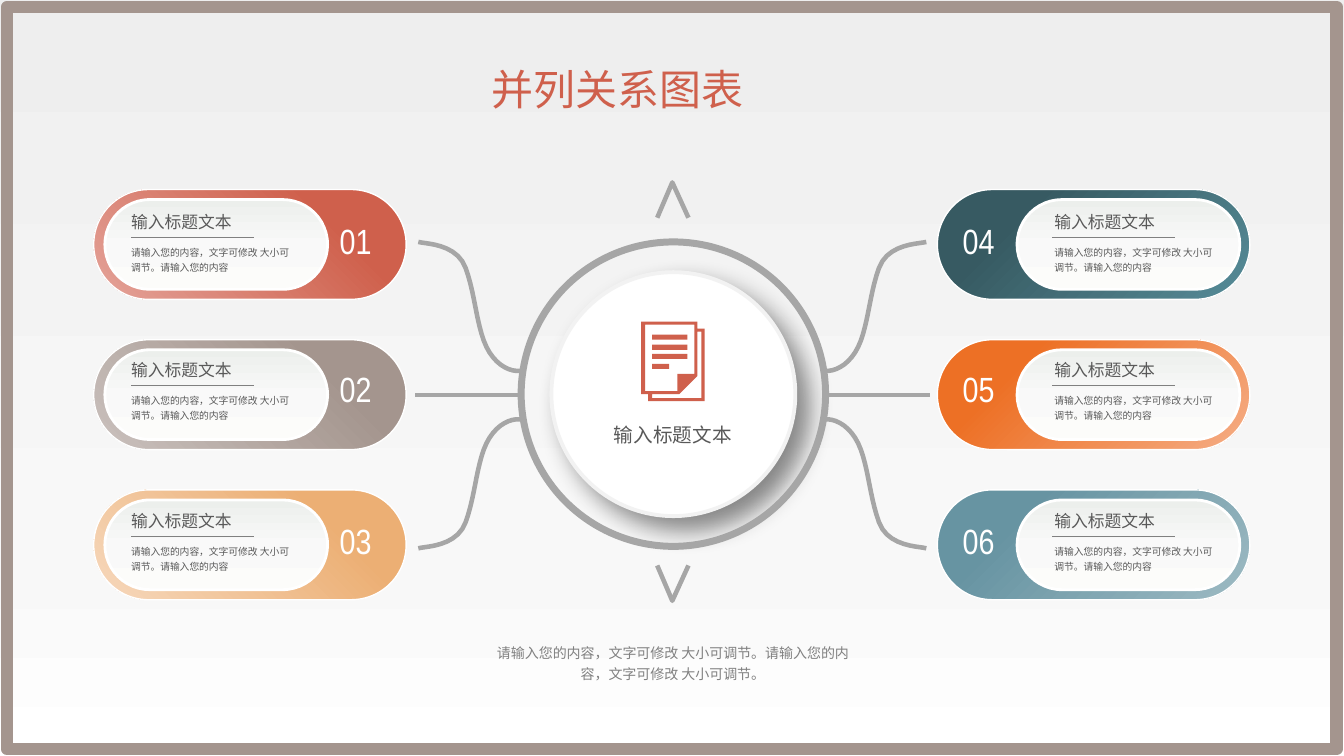
import math

import lxml.etree
import pptx
import pptx.dml.color
import pptx.enum.lang
import pptx.enum.shapes
import pptx.enum.text
import pptx.oxml.ns
import pptx.util

RGBColor = pptx.dml.color.RGBColor
WHITE, BLACK = RGBColor(0xFF, 0xFF, 0xFF), RGBColor(0, 0, 0)
PALE, SILVER = RGBColor(0xF2, 0xF2, 0xF2), RGBColor(0xA6, 0xA6, 0xA6)
MIST, CLOUD = RGBColor(0xEE, 0xEE, 0xEE), RGBColor(0xF8, 0xF8, 0xF8)
GRAY, DARK = RGBColor(0x80, 0x80, 0x80), RGBColor(0x59, 0x59, 0x59)
RED, RED_LIGHT = RGBColor(0xCF, 0x60, 0x4C), RGBColor(0xE4, 0xA3, 0x99)
TAUPE, TAUPE_LIGHT = RGBColor(0xA4, 0x95, 0x8E), RGBColor(0xCA, 0xC1, 0xBD)
SAND, SAND_LIGHT = RGBColor(0xEC, 0xAF, 0x74), RGBColor(0xF6, 0xD8, 0xBC)
PINE, PINE_LIGHT = RGBColor(0x37, 0x5A, 0x62), RGBColor(0x56, 0x8C, 0x98)
ORANGE, ORANGE_LIGHT = RGBColor(0xED, 0x70, 0x25), RGBColor(0xF5, 0xAD, 0x85)
TEAL, TEAL_LIGHT = RGBColor(0x67, 0x94, 0xA2), RGBColor(0x9D, 0xBA, 0xC3)
PANEL_STOPS = [(0, RGBColor(0xEC, 0xEF, 0xEC)), (51, RGBColor(0xF9, 0xF9, 0xF9)),
               (100, RGBColor(0xFC, 0xFC, 0xFA))]
HEADING = "输入标题文本"
BODY = "请输入您的内容，文字可修改 大小可调节。请输入您的内容"
PX = 9144
MIRROR_X, MIRROR_Y = 1334, 784
ALIGN = pptx.enum.text.PP_ALIGN
SHAPE = pptx.enum.shapes.MSO_SHAPE
qn = pptx.oxml.ns.qn


def write(box, text, size, color, font="Noto Sans CJK SC", align=ALIGN.LEFT, spacing=1.0, before=0):
    """Fill a box with one formatted paragraph."""
    frame = box.text_frame
    frame.word_wrap = True
    frame.auto_size = pptx.enum.text.MSO_AUTO_SIZE.SHAPE_TO_FIT_TEXT
    frame.vertical_anchor = pptx.enum.text.MSO_ANCHOR.TOP
    frame.margin_left = frame.margin_top = frame.margin_right = frame.margin_bottom = 0
    para = frame.paragraphs[0]
    para.alignment = align
    para.line_spacing = spacing
    para.space_before = pptx.util.Pt(before)
    span = para.add_run()
    span.text = text
    span.font.size = pptx.util.Pt(size)
    span.font.color.rgb = color
    span.font.name = font
    span.font.language_id = pptx.enum.lang.MSO_LANGUAGE_ID.SIMPLIFIED_CHINESE
    lxml.etree.SubElement(span.font._element, qn("a:ea"), typeface=font)


class Painter:
    """Draw styled elements on the current page."""

    def __init__(self, page):
        self.shapes = page.shapes

    def gradient(self, fill, element, stops, angle):
        fill.gradient()
        fill.gradient_angle = 360 - angle
        stop_list = element.find(".//" + qn("a:gsLst"))
        for old_stop in list(stop_list):
            stop_list.remove(old_stop)
        for position, color in stops:
            stop = lxml.etree.SubElement(stop_list, qn("a:gs"), pos=str(position * 1000))
            lxml.etree.SubElement(stop, qn("a:srgbClr"), val=str(color))

    def finish(self, shape, fill=None, line=None, weight=1):
        shape.shadow.inherit = False
        for paint, color in ((shape.fill, fill), (shape.line.fill, line)):
            if color is None:
                paint.background()
            else:
                paint.solid()
                paint.fore_color.rgb = color
        if line is not None:
            shape.line.width = pptx.util.Pt(weight)
        return shape

    def preset(self, kind, left, top, width, height, **style):
        shape = self.shapes.add_shape(kind, left * PX, top * PX, width * PX, height * PX)
        return self.finish(shape, **style)

    def pill(self, left, top, width, height, stops, angle, weight, mirrored):
        pill = self.preset(SHAPE.ROUNDED_RECTANGLE, left, top, width, height,
                           line=WHITE, weight=weight)
        pill.adjustments[0] = 0.5
        self.gradient(pill.fill, pill._element, stops, angle)
        if mirrored:
            pill._element.spPr.find(qn("a:xfrm")).set("flipH", "1")

    def drop_shadow(self, shape, blur, distance, angle, opacity):
        shadow = lxml.etree.SubElement(
            shape._element.spPr.find(qn("a:effectLst")), qn("a:outerShdw"),
            blurRad=str(int(pptx.util.Pt(blur))), dist=str(int(pptx.util.Pt(distance))),
            dir=str(angle * 60000), algn="tl", rotWithShape="0")
        color = lxml.etree.SubElement(shadow, qn("a:srgbClr"), val=str(BLACK))
        lxml.etree.SubElement(color, qn("a:alpha"), val=str(opacity * 1000))

    def outline(self, contours, closed=False, **style):
        builder = None
        for contour in contours:
            points = [(round(x * PX), round(y * PX)) for x, y in contour]
            if builder is None:
                builder = self.shapes.build_freeform(*points[0], scale=1.0)
            else:
                builder.move_to(*points[0])
            builder.add_line_segments(points[1:], close=closed)
        return self.finish(builder.convert_to_shape(), **style)

    def line(self, left, right, y, color, weight):
        line = self.shapes.add_connector(pptx.enum.shapes.MSO_CONNECTOR.STRAIGHT,
                                         left * PX, y * PX, right * PX, y * PX)
        line.line.color.rgb = color
        line.line.width = pptx.util.Pt(weight)
        lxml.etree.SubElement(line._element.spPr, qn("a:effectLst"))

    def text(self, left, top, width, height, text, **style):
        box = self.shapes.add_textbox(left * PX, top * PX, width * PX, height * PX)
        write(box, text, **style)

    def title(self, left, top, width, height, text, **style):
        box = self.shapes.title
        box.left, box.top, box.width, box.height = (n * PX for n in (left, top, width, height))
        write(box, text, **style)


def trace_curve(start, segments, steps=10):
    """Return points along a chain of cubic curves."""
    points = [start]
    for segment in segments:
        corners = (points[-1], *segment)
        for t in (step / steps for step in range(1, steps + 1)):
            weights = [math.comb(3, k) * t**k * (1 - t) ** (3 - k) for k in range(4)]
            points.append(tuple(sum(w * corner[axis] for w, corner in zip(weights, corners))
                                for axis in (0, 1)))
    return points


def bar(left, top, right, bottom):
    """Return the corners of an upright rectangle."""
    return [(left, top), (right, top), (right, bottom), (left, bottom)]


def draw_card(painter, number, row, stops, mirrored):
    """Draw one numbered card in its row and column."""
    top = 188 + 149 * row
    text_top = (210, 357, 507)[row]
    pill_left, panel_left, number_left, text_left, rule_left = (
        (930, 1009, 955, 1046, 1044) if mirrored else (93, 104, 337, 130, 130))
    painter.pill(pill_left, top, 310, 109, stops, 135, 1, mirrored)
    painter.pill(panel_left, top + 10, 221, 89, PANEL_STOPS, 90, 2, mirrored)
    painter.text(number_left, text_top + 8, 61, 42, f"{number:02}",
                 size=25, color=WHITE, font="Arial Narrow")
    painter.text(text_left, text_top + 31, 165, 31, BODY,
                 size=7, color=DARK, spacing=1.3, before=1.4)
    painter.text(text_left, text_top, 155, 20, HEADING, size=12, color=DARK)
    painter.line(rule_left, rule_left + 122, text_top + 25, GRAY, 0.5)


def draw_hub(painter):
    """Draw the ring with its branches, arrows and document icon."""
    stroke = {"line": SILVER, "weight": 3.25}
    painter.preset(SHAPE.OVAL, 517, 240, 302, 302, line=SILVER, weight=5)
    branch = trace_curve((415, 240), [((421, 242), (453, 241), (462, 266)),
                                      ((471, 291), (472, 316), (480, 338)),
                                      ((488, 360), (504, 369), (516, 368))])
    for mirrored in (False, True):
        side = [(MIRROR_X - x, y) if mirrored else (x, y) for x, y in branch]
        painter.outline([side], **stroke)
        painter.outline([[(x, MIRROR_Y - y) for x, y in side]], **stroke)
        left = 816 if mirrored else 412
        painter.line(left, left + 107, 392, SILVER, 3.25)
    for base, tip in ((216, 181), (561, 596)):
        painter.outline([[(652, base), (667, tip), (683, base)]], **stroke)
    document = [bar(647, y, 682, y + 5) for y in (332, 342, 351)] + [
        bar(647, 361, 664, 366),
        [(692, 326), (692, 319), (636, 319), (636, 391), (643, 391), (643, 398),
         (699, 398), (699, 326)],
        [(640, 388), (640, 322), (689, 322), (689, 371), (672, 371), (672, 388)],
        [(696, 395), (647, 395), (647, 391), (674, 391), (692, 373), (692, 329), (696, 329)]]
    painter.outline(document, closed=True, fill=RED)
    painter.text(590, 420, 155, 24, HEADING, size=14, color=DARK, align=ALIGN.CENTER)


def main():
    """Build and save the deck."""
    deck = pptx.Presentation()
    deck.slide_width, deck.slide_height = 12192000, 750 * PX
    page = deck.slides.add_slide(deck.slide_layouts[5])
    painter = Painter(page)
    painter.gradient(page.background.fill, page._element,
                     [(0, MIST), (74, CLOUD), (100, WHITE)], 90)
    painter.title(488, 48, 357, 66, "并列关系图表", size=30, color=RED,
                  align=ALIGN.JUSTIFY, spacing=1.3, before=6)
    disc = painter.preset(SHAPE.OVAL, 547, 270, 242, 242, fill=WHITE, line=PALE, weight=2.75)
    painter.drop_shadow(disc, blur=18, distance=12.7, angle=45, opacity=45)
    cards = [(RED, RED_LIGHT), (TAUPE, TAUPE_LIGHT), (SAND, SAND_LIGHT),
             (PINE, PINE_LIGHT), (ORANGE, ORANGE_LIGHT), (TEAL, TEAL_LIGHT)]
    for index, (color, light) in enumerate(cards):
        draw_card(painter, index + 1, index % 3, [(25, color), (100, light)], index >= 3)
    draw_hub(painter)
    painter.text(489, 634, 357, 44, BODY + "，文字可修改 大小可调节。", size=10, color=GRAY,
                 align=ALIGN.CENTER, spacing=1.3, before=2)
    painter.preset(SHAPE.RECTANGLE, 7, 7, 1319, 736, line=TAUPE, weight=9)
    deck.save("out.pptx")


if __name__ == "__main__":
    main()
